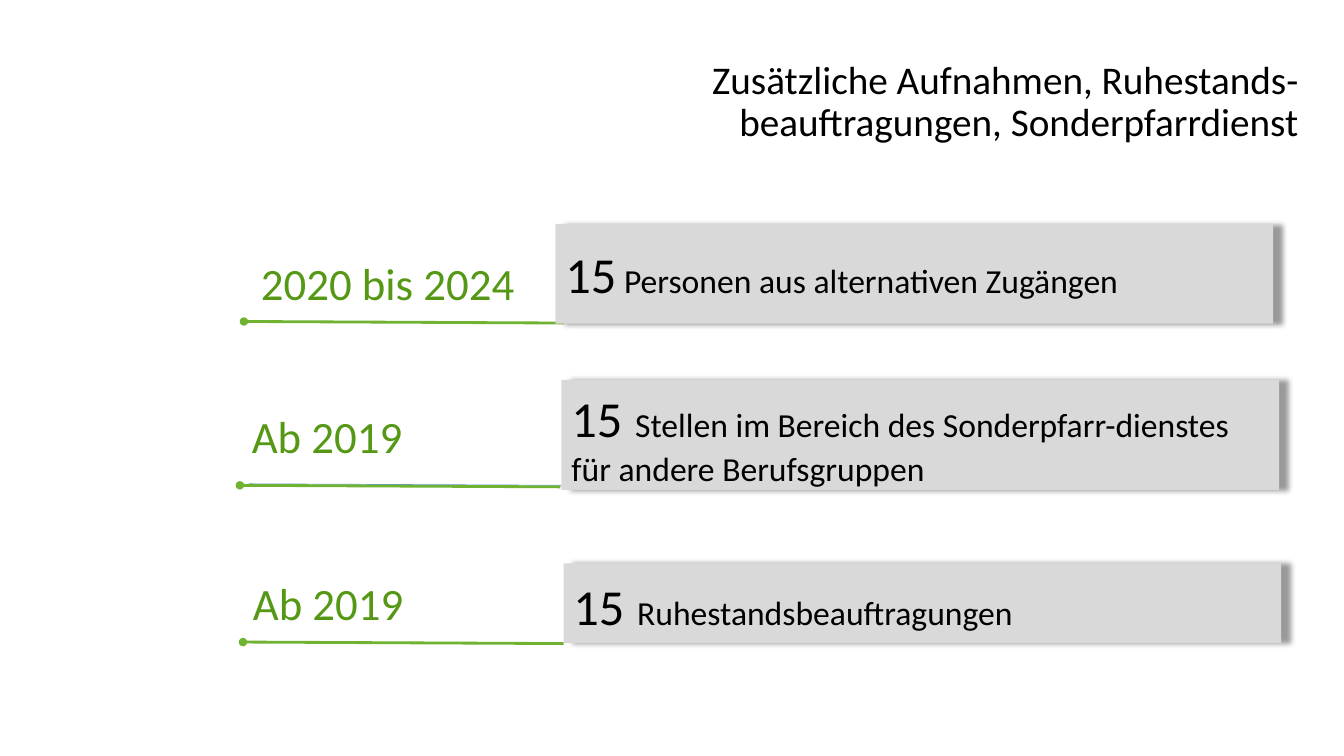
import pptx
import pptx.util
import pptx.dml.color
import pptx.enum.shapes
import pptx.enum.text
import pptx.oxml
import pptx.oxml.ns

theme = {
    "font": "Calibri",
    "text": "000000",
    "label": "559815",
    "line": "70B231",
    "thin_line": "5B9BD5",
    "box": "D9D9D9",
    "title_size": 28,
    "label_size": 32,
    "number_size": 36,
    "gap_size": 40,
    "text_size": 24,
}
anchor_middle = pptx.enum.text.MSO_ANCHOR.MIDDLE
align = pptx.enum.text.PP_ALIGN
namespace = pptx.oxml.ns.nsdecls("a")

presentation = pptx.Presentation()
presentation.slide_width = pptx.util.Inches(13.33)
presentation.slide_height = pptx.util.Inches(7.5)
column = presentation.slide_width / 100
row = presentation.slide_height / 100
slide = presentation.slides.add_slide(presentation.slide_layouts[5])


def write(shape, runs, color, alignment, spacing):
    frame = shape.text_frame
    frame.word_wrap = True
    frame.auto_size = pptx.enum.text.MSO_AUTO_SIZE.NONE
    frame.vertical_anchor = anchor_middle
    paragraph = frame.paragraphs[0]
    paragraph.alignment = alignment
    paragraph.line_spacing = spacing
    for text, size in runs:
        run = paragraph.add_run()
        run.text = text
        run.font.name = theme["font"]
        run.font.size = pptx.util.Pt(size)
        run.font.color.rgb = pptx.dml.color.RGBColor.from_string(color)


def draw_line(left, top, color, width):
    line = slide.shapes.add_connector(
        pptx.enum.shapes.MSO_CONNECTOR.STRAIGHT,
        int((left + 23.85) * column), int((top + 0.2) * row),
        int(left * column), int(top * row),
    )
    line.line.color.rgb = pptx.dml.color.RGBColor.from_string(color)
    line.line.width = pptx.util.Pt(width)
    line._element.spPr.append(pptx.oxml.parse_xml(f"<a:effectLst {namespace}/>"))
    return line


title = slide.shapes.title
title.left, title.width = int(38.55 * column), int(58.8 * column)
title.top, title.height = int(7.33 * row), int(12.53 * row)
write(title, [("Zusätzliche Aufnahmen, Ruhestands-beauftragungen, Sonderpfarrdienst",
               theme["title_size"])], theme["text"], align.RIGHT, 0.9)

draw_line(18.53, 64, theme["thin_line"], 0.5)

entries = [
    ("2020 bis 2024", "Personen aus alternativen Zugängen", theme["text_size"],
     (18.15, 42.53), (18.68, 32.93), (41.33, 29.6, 13.2)),
    ("Ab 2019", "Stellen im Bereich des Sonderpfarr-dienstes für andere Berufsgruppen",
     theme["gap_size"], (17.85, 64.2), (18, 53.07), (41.78, 50.27, 14.53)),
    ("Ab 2019", "Ruhestandsbeauftragungen", theme["gap_size"],
     (18.08, 84.93), (18.08, 75.2), (41.93, 74.53, 10.53)),
]

for period, description, gap_size, line_start, label_start, box_place in entries:
    line = draw_line(*line_start, theme["line"], 2)
    line.line._get_or_add_ln().append(
        pptx.oxml.parse_xml(f'<a:tailEnd {namespace} type="oval"/>'))

    label = slide.shapes.add_textbox(
        int(label_start[0] * column), int(label_start[1] * row),
        int(22.73 * column), int(9.87 * row))
    write(label, [(period, theme["label_size"])], theme["label"], align.LEFT, 0.9)

    left, top, height = box_place
    box = slide.shapes.add_shape(
        pptx.enum.shapes.MSO_SHAPE.RECTANGLE,
        int(left * column), int(top * row), int(53.4 * column), int(height * row))
    box.fill.solid()
    box.fill.fore_color.rgb = pptx.dml.color.RGBColor.from_string(theme["box"])
    box.line.fill.background()
    box._element.spPr.append(pptx.oxml.parse_xml(
        f'<a:effectLst {namespace}><a:outerShdw blurRad="50800" dist="76200" dir="0" '
        'algn="l" rotWithShape="0"><a:srgbClr val="000000"><a:alpha val="40000"/>'
        '</a:srgbClr></a:outerShdw></a:effectLst>'))
    write(box, [("15", theme["number_size"]), (" ", gap_size),
                (description, theme["text_size"])], theme["text"], align.LEFT, 1.0)

presentation.save("out.pptx")
